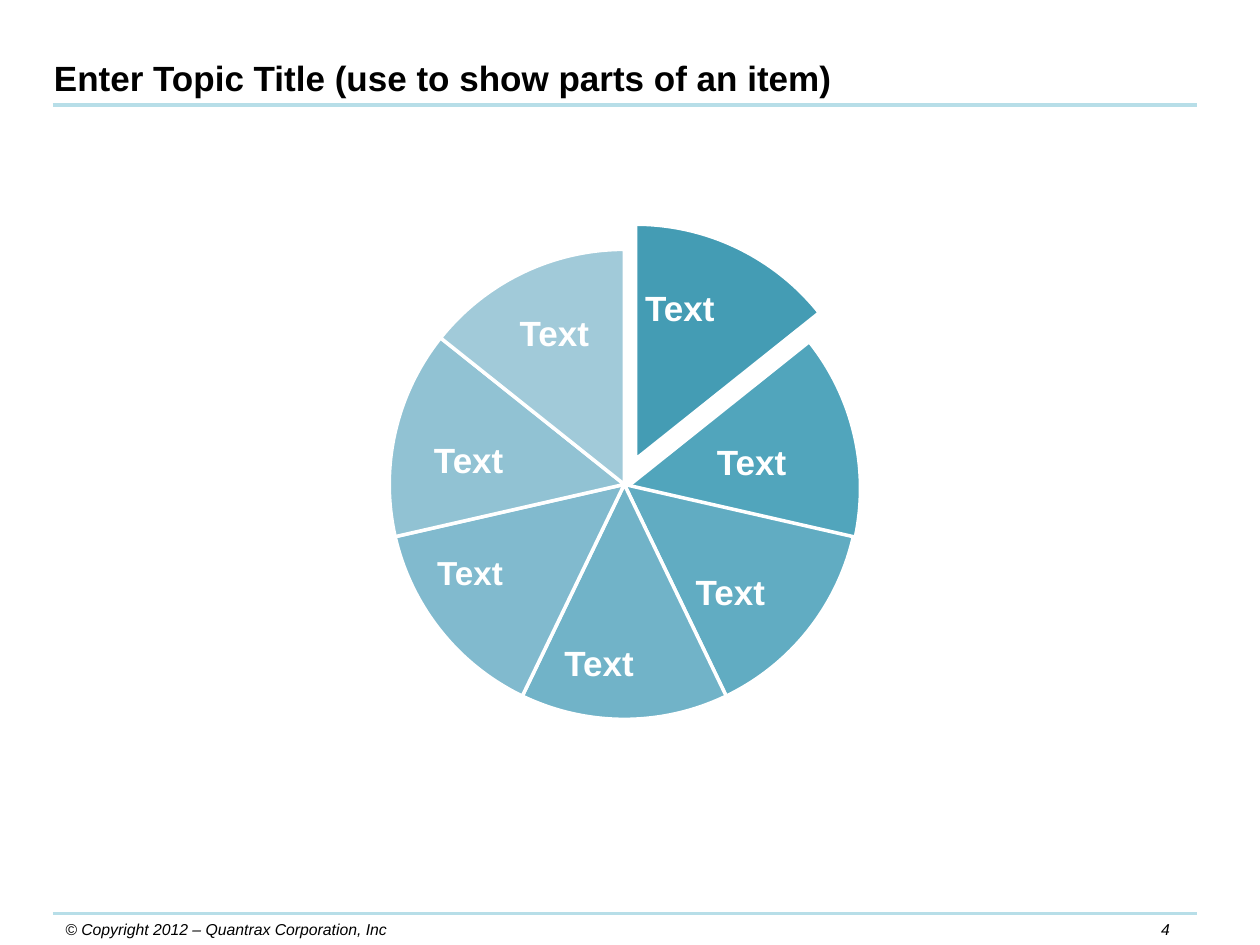
from dataclasses import dataclass

from lxml import etree
from pptx import Presentation
from pptx.dml.color import RGBColor
from pptx.enum.shapes import MSO_CONNECTOR, MSO_SHAPE
from pptx.enum.text import MSO_ANCHOR, PP_ALIGN
from pptx.oxml.ns import qn
from pptx.util import Inches, Pt

LEFT, CENTER = PP_ALIGN.LEFT, PP_ALIGN.CENTER
TOP, MIDDLE = MSO_ANCHOR.TOP, MSO_ANCHOR.MIDDLE
PIE = MSO_SHAPE.PIE
STRAIGHT = MSO_CONNECTOR.STRAIGHT

FONT = "Arial"
BLACK, WHITE, RULE = "000000", "FFFFFF", "B7DEE8"
DIAMETER = 3.73
PIE_LEFT, PIE_TOP = 3.09, 1.98
START_ANGLE = 270
ANGLE_UNIT = 0.6


@dataclass
class Box:
    left: float
    top: float
    width: float
    height: float


@dataclass
class Style:
    size: int = 20
    color: str = BLACK
    bold: bool = False
    italic: bool = False
    align: PP_ALIGN = LEFT
    anchor: MSO_ANCHOR = TOP
    inset_x: float = 0.1
    inset_y: float = 0.05
    spacing: float = 1.0


@dataclass
class Slice:
    color: str
    label: Box
    align: PP_ALIGN = LEFT
    size: int = 20
    dx: float = 0
    dy: float = 0


SLICES = [
    Slice("449CB4", Box(5.09, 2.14, 1.02, 0.64), dx=0.09, dy=-0.2),
    Slice("51A5BC", Box(5.66, 3.34, 1.08, 0.69), dx=0.01, dy=0.03),
    Slice("61ACC2", Box(5.49, 4.36, 0.98, 0.71)),
    Slice("71B3C8", Box(4.45, 4.92, 1, 0.71)),
    Slice("81BACE", Box(3.44, 4.21, 0.98, 0.71), size=19),
    Slice("91C2D3", Box(3.18, 3.32, 1.08, 0.69), CENTER),
    Slice("A1CAD9", Box(3.89, 2.34, 1.02, 0.64), CENTER),
]


def rgb(color: str) -> RGBColor:
    return RGBColor.from_string(color)


def add_text(s, text: str, box: Box, style: Style) -> None:
    tb = s.shapes.add_textbox(Inches(box.left), Inches(box.top),
                              Inches(box.width), Inches(box.height))
    tf = tb.text_frame
    tf.word_wrap = True
    tf.vertical_anchor = style.anchor
    tf.margin_left = tf.margin_right = Inches(style.inset_x)
    tf.margin_top = tf.margin_bottom = Inches(style.inset_y)
    p = tf.paragraphs[0]
    p.alignment = style.align
    p.line_spacing = style.spacing
    r = p.add_run()
    r.text = text
    r.font.name = FONT
    r.font.size = Pt(style.size)
    r.font.bold = style.bold
    r.font.italic = style.italic
    r.font.color.rgb = rgb(style.color)


def add_rule(s, y: float) -> None:
    line = s.shapes.add_connector(STRAIGHT, Inches(0.42), Inches(y),
                                  Inches(9.5), Inches(y))
    line.line.color.rgb = rgb(RULE)
    line.line.width = Pt(2.25)
    etree.SubElement(line._element.spPr, qn("a:effectLst"))


def add_slice(s, item: Slice, start: float, end: float) -> None:
    sp = s.shapes.add_shape(PIE, Inches(PIE_LEFT + item.dx),
                            Inches(PIE_TOP + item.dy),
                            Inches(DIAMETER), Inches(DIAMETER))
    sp.adjustments[0] = start % 360 * ANGLE_UNIT
    sp.adjustments[1] = end % 360 * ANGLE_UNIT
    sp.shadow.inherit = False
    sp.fill.solid()
    sp.fill.fore_color.rgb = rgb(item.color)
    sp.line.color.rgb = rgb(WHITE)
    sp.line.width = Pt(2)
    add_text(s, "Text", item.label,
             Style(item.size, WHITE, bold=True, align=item.align,
                   anchor=MIDDLE, inset_x=0.03, inset_y=0.03, spacing=0.9))


def main() -> None:
    prs = Presentation()
    prs.slide_width, prs.slide_height = Inches(10), Inches(7.5)
    s = prs.slides.add_slide(prs.slide_layouts[6])

    add_rule(s, 0.83)
    add_text(s, "4", Box(9, 7.25, 0.5, 0.25),
             Style(9, italic=True, align=CENTER))
    add_text(s, "© Copyright 2012 – Quantrax Corporation, Inc",
             Box(0.42, 7.25, 3.25, 0.25), Style(9, italic=True))
    add_rule(s, 7.25)

    sweep = 360 / len(SLICES)
    for i, item in enumerate(SLICES):
        start = START_ANGLE + i * sweep
        add_slice(s, item, start, start + sweep)

    add_text(s, "Enter Topic Title (use to show parts of an item)",
             Box(0.33, 0.4, 6.67, 0.44), Style(bold=True))
    prs.save("out.pptx")


if __name__ == "__main__":
    main()
